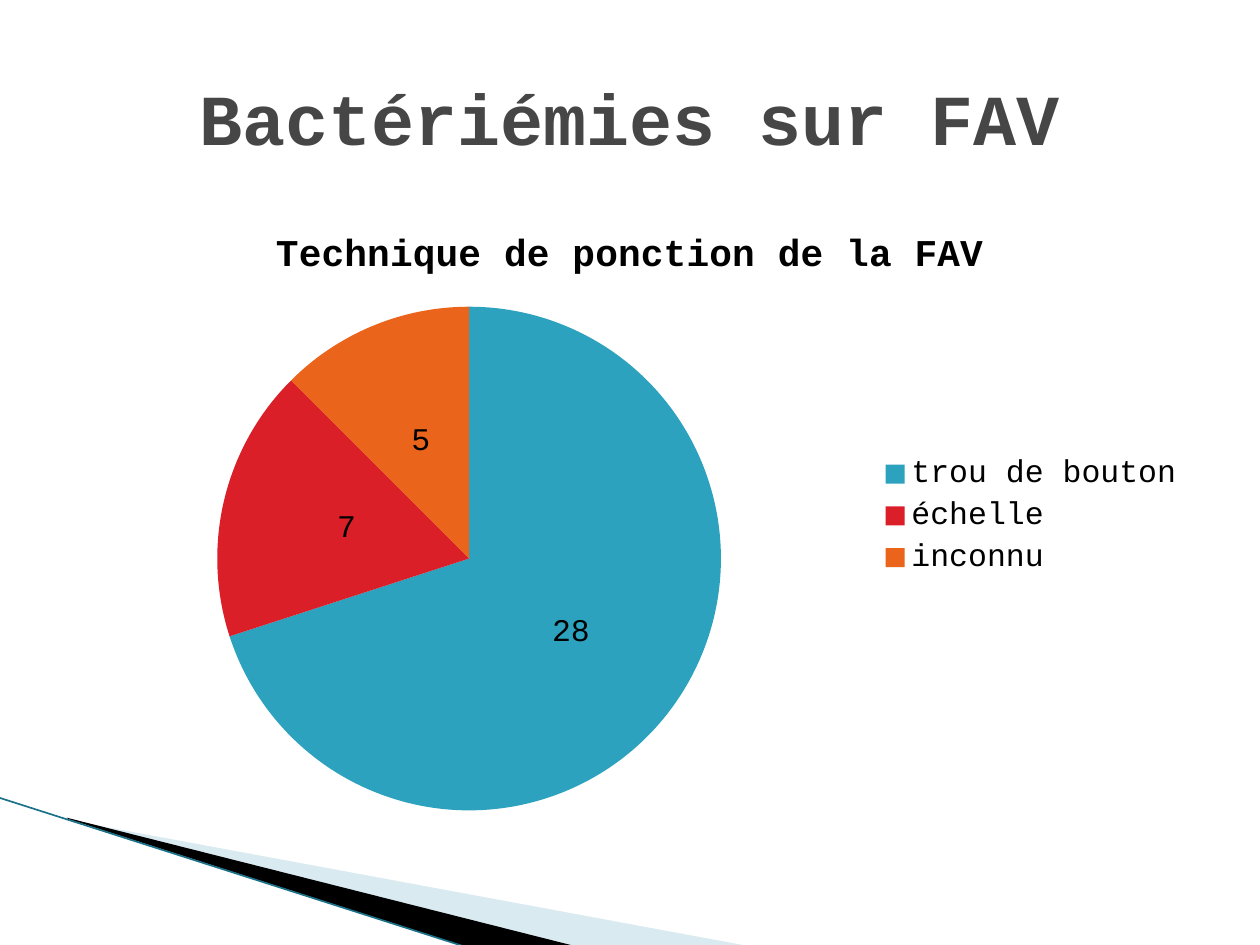
from lxml import etree
from pptx import Presentation
from pptx.chart.data import CategoryChartData
from pptx.dml.color import RGBColor
from pptx.enum.chart import XL_CHART_TYPE, XL_LABEL_POSITION, XL_LEGEND_POSITION
from pptx.enum.shapes import MSO_CONNECTOR
from pptx.enum.text import MSO_ANCHOR, PP_ALIGN
from pptx.oxml.ns import qn
from pptx.util import Inches, Pt

PIE = XL_CHART_TYPE.PIE
LABEL_CENTER = XL_LABEL_POSITION.CENTER
LEGEND_RIGHT = XL_LEGEND_POSITION.RIGHT
STRAIGHT = MSO_CONNECTOR.STRAIGHT
MIDDLE = MSO_ANCHOR.MIDDLE
CENTER = PP_ALIGN.CENTER

FONT_NAME = "Courier New"
TITLE_ONLY_LAYOUT = 5
COLORS = {
    "title": "464646",
    "text": "000000",
    "pale_wedge": "A0CBDC",
    "dark_wedge": "000000",
    "edge": "1B7288",
}
TECHNIQUES = [
    ("trou de bouton", 28, "2DA2BF"),
    ("échelle", 7, "DA1F28"),
    ("inconnu", 5, "EB641B"),
]


def rgb(value):
    return RGBColor.from_string(value)


def format_font(font, color, **values):
    for name, value in {"name": FONT_NAME, **values}.items():
        setattr(font, name, value)
    font.color.rgb = rgb(color)


def place(shape, left, top, width, height):
    box = {"left": left, "top": top, "width": width, "height": height}
    for name, value in box.items():
        setattr(shape, name, Inches(value))


def set_title(slide, text):
    title = slide.shapes.title
    place(title, 0.5, 0.3, 9, 1.25)
    title.text_frame.text = text
    title.text_frame.vertical_anchor = MIDDLE
    paragraph = title.text_frame.paragraphs[0]
    paragraph.alignment = CENTER
    format_font(paragraph.runs[0].font, COLORS["title"], size=Pt(41), bold=True)


def set_frame(shape, frame):
    left, top = shape.left, shape.top
    place(shape, *frame)
    outline = shape._element.spPr.find(".//" + qn("a:path"))
    outline.set("w", str(shape.width))
    outline.set("h", str(shape.height))
    for point in outline.iter(qn("a:pt")):
        point.set("x", str(int(point.get("x")) + left - shape.left))
        point.set("y", str(int(point.get("y")) + top - shape.top))


def add_wedge(slide, points, frame, color, opacity=100):
    start, *others = [(Inches(x), Inches(y)) for x, y in points]
    builder = slide.shapes.build_freeform(*start)
    builder.add_line_segments(others, close=True)
    shape = builder.convert_to_shape()
    set_frame(shape, frame)
    shape.shadow.inherit = False
    shape.fill.solid()
    shape.fill.fore_color.rgb = rgb(color)
    shape.line.fill.background()
    if opacity < 100:
        fill_color = shape.fill._xPr.find(qn("a:solidFill"))[0]
        etree.SubElement(fill_color, qn("a:alpha")).set("val", str(opacity * 1000))


def add_edge(slide, begin, end, color, width):
    ends = [Inches(value) for value in (*begin, *end)]
    connector = slide.shapes.add_connector(STRAIGHT, *ends)
    connector.line.color.rgb = rgb(color)
    connector.line.width = Pt(width)
    etree.SubElement(connector._element.spPr, qn("a:effectLst"))


def add_pie(slide, title, slices):
    data = CategoryChartData()
    data.categories = [name for name, _, _ in slices]
    data.add_series(title, [value for _, value, _ in slices])
    box = [Inches(value) for value in (0.5, 1.62, 9, 4.95)]
    chart = slide.shapes.add_chart(PIE, *box, data).chart
    format_font(chart.font, COLORS["text"], size=Pt(18))

    chart.has_title = True
    chart.chart_title.include_in_layout = False
    chart.chart_title.text_frame.text = title
    title_run = chart.chart_title.text_frame.paragraphs[0].runs[0]
    format_font(title_run.font, COLORS["text"], size=Pt(21.6), bold=True)

    chart.has_legend = True
    chart.legend.position = LEGEND_RIGHT
    chart.legend.include_in_layout = False

    plot = chart.plots[0]
    plot.vary_by_categories = True
    plot.has_data_labels = True
    labels = plot.data_labels
    labels.show_value = True
    labels.show_percentage = False
    labels.position = LABEL_CENTER
    for index, (_, _, color) in enumerate(slices):
        fill = plot.series[0].points[index].format.fill
        fill.solid()
        fill.fore_color.rgb = rgb(color)


def main():
    presentation = Presentation()
    presentation.slide_width = Inches(10)
    presentation.slide_height = Inches(7.5)
    layout = presentation.slide_layouts[TITLE_ONLY_LAYOUT]
    slide = presentation.slides.add_slide(layout)

    add_wedge(slide, [(0.55, 6.51), (5.95, 7.51), (4.56, 7.51), (0.55, 6.5)],
              (0.78, 5.47, 4.16, 1.58), COLORS["pale_wedge"], opacity=40)
    add_wedge(slide, [(0.53, 6.49), (4.57, 7.51), (3.72, 7.52), (0.54, 6.5)],
              (-0.06, 6.33, 4.16, 0.92), COLORS["dark_wedge"])
    add_edge(slide, (-0.01, 6.33), (3.71, 7.52), COLORS["edge"], 0.95)
    add_pie(slide, "Technique de ponction de la FAV", TECHNIQUES)
    set_title(slide, "Bactériémies sur FAV")
    presentation.save("out.pptx")


if __name__ == "__main__":
    main()
